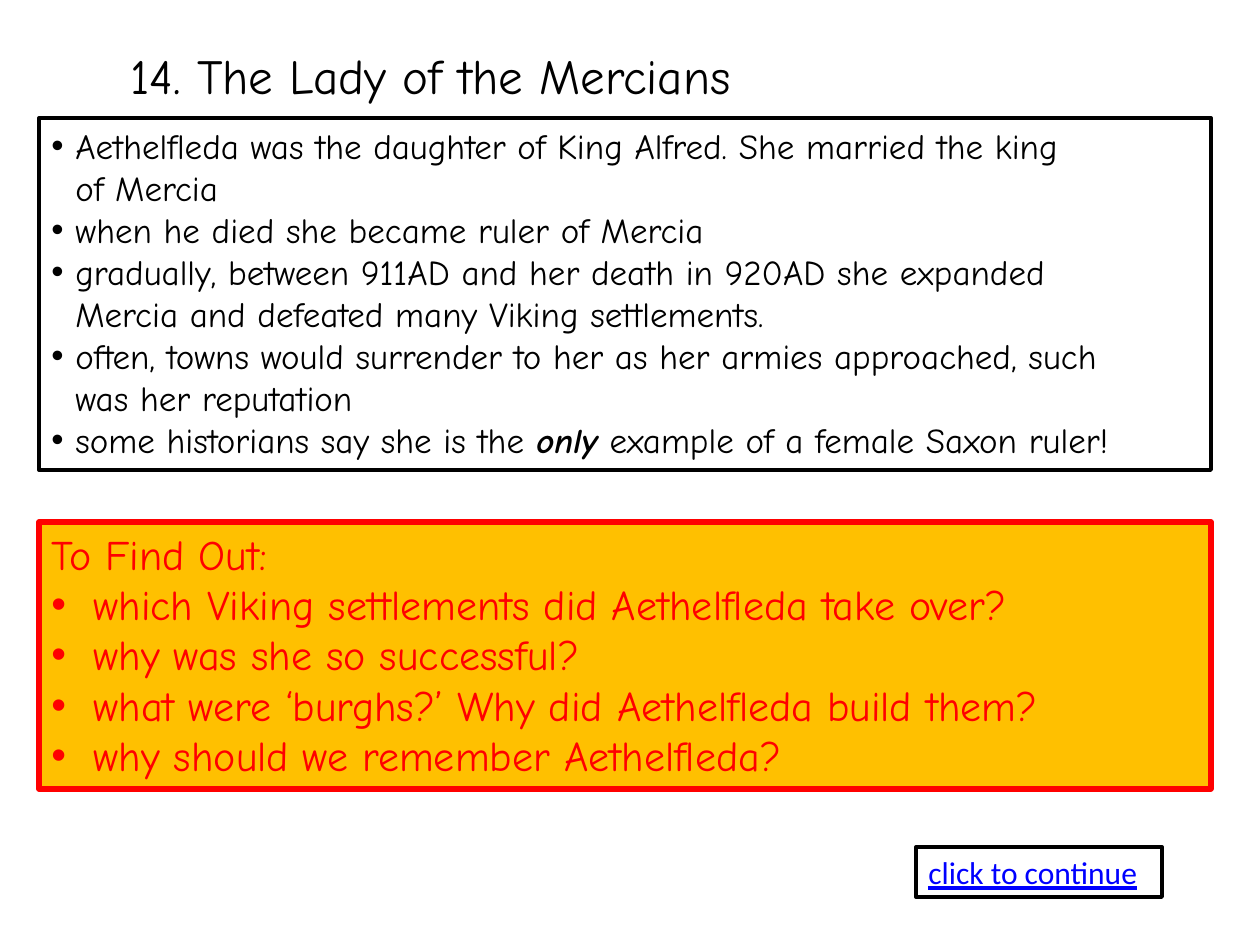
from lxml import etree
from pptx import Presentation, util as u
from pptx.dml.color import RGBColor
from pptx.enum import shapes, text
from pptx.oxml.ns import qn

SCALE = 914400 / 126
HAND = "Comic Neue"
LEFT, WIDE = 39, 1172

FACTS = [
    (True, ["Aethelfleda was the daughter of King Alfred. She married the king"]),
    (False, ["of Mercia"]),
    (True, ["when he died she became ruler of Mercia"]),
    (True, ["gradually, between 911AD and her death in 920AD she expanded"]),
    (False, ["Mercia and defeated many Viking settlements."]),
    (True, ["often, towns would surrender to her as her armies approached, such"]),
    (False, ["was her reputation"]),
    (True, ["some historians say she is the ", "*only",
            " example of a female Saxon ruler!"]),
]
TASKS = [
    "which Viking settlements did Aethelfleda take over?",
    "why was she so successful?",
    "what were ‘burghs?’ Why did Aethelfleda build them?",
    "why should we remember Aethelfleda?",
]


def px(n):
    return u.Emu(round(n * SCALE))


def rgb(code):
    return RGBColor.from_string(code)


def set_frame(shape):
    frame = shape.text_frame
    frame.word_wrap = True
    frame.vertical_anchor = text.MSO_ANCHOR.TOP
    return frame


def add_box(slide, x, y, w, h, line, width, fill=None):
    box = slide.shapes.add_shape(shapes.MSO_SHAPE.RECTANGLE,
                                 px(x), px(y), px(w), px(h))
    box.shadow.inherit = False
    if fill:
        box.fill.solid()
        box.fill.fore_color.rgb = rgb(fill)
    else:
        box.fill.background()
    box.line.color.rgb = rgb(line)
    box.line.width = u.Pt(width)
    return set_frame(box)


def add_para(frame, runs, size, color, font=HAND, indent=0, bullet=False):
    """Add a paragraph; a run that starts with * is bold italic."""
    para = frame.paragraphs[0]
    if para.runs:
        para = frame.add_paragraph()
    para.alignment = text.PP_ALIGN.LEFT
    props = para._p.get_or_add_pPr()
    props.set("marL", str(px(indent)))
    props.set("indent", str(px(-indent if bullet else 0)))
    if bullet:
        etree.SubElement(props, qn("a:buFont")).set("typeface", "Arial")
        etree.SubElement(props, qn("a:buChar")).set("char", "•")
    for part in runs:
        run = para.add_run()
        run.text = part.lstrip("*")
        run.font.name = font
        run.font.size = u.Pt(size)
        run.font.color.rgb = rgb(color)
        if part.startswith("*"):
            run.font.bold = run.font.italic = True
    return para


def main():
    deck = Presentation()
    deck.slide_width, deck.slide_height = px(1260), px(945)
    slide = deck.slides.add_slide(deck.slide_layouts[6])

    # Title
    title = slide.shapes.add_textbox(px(118), px(39), px(798), px(72))
    add_para(set_frame(title), ["14. The Lady of the Mercians"], 28, "000000")

    # Facts
    facts = add_box(slide, LEFT, 118, WIDE, 352, "000000", 2.25)
    for bullet, runs in FACTS:
        add_para(facts, runs, 20, "000000", indent=24, bullet=bullet)

    # Questions
    tasks = add_box(slide, LEFT, 522, WIDE, 267, "FF0000", 3, "FFC000")
    add_para(tasks, ["To Find Out:"], 24, "FF0000")
    for task in TASKS:
        add_para(tasks, [task], 24, "FF0000", indent=42, bullet=True)

    # Continue button
    button = add_box(slide, 916, 847, 246, 50, "000000", 2.25)
    label = add_para(button, ["click to continue"], 18, "0000FF", "Calibri")
    label.runs[0].font.underline = True

    deck.save("out.pptx")


if __name__ == "__main__":
    main()
